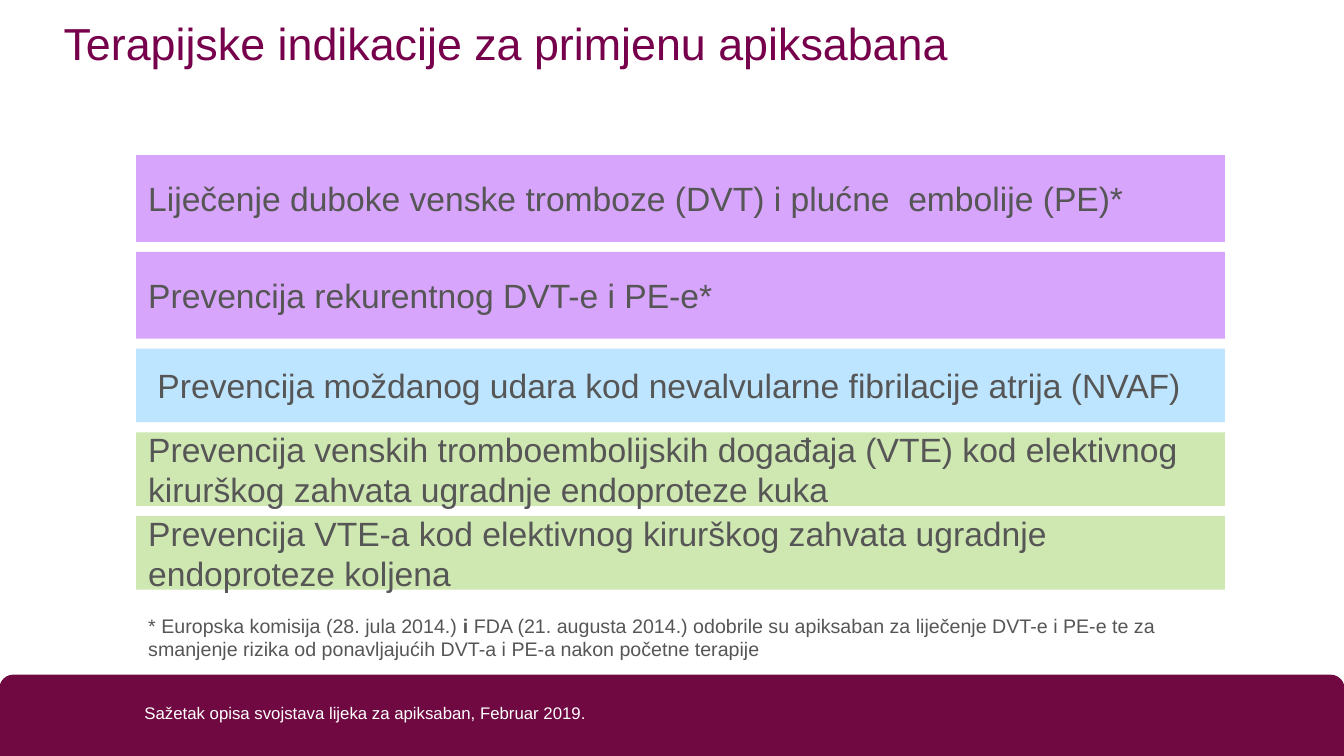
from pptx import Presentation
from pptx.dml.color import RGBColor
from pptx.enum.shapes import MSO_SHAPE
from pptx.enum.text import MSO_ANCHOR, PP_ALIGN
from pptx.util import Inches, Pt

WIDTH, HEIGHT = 13.33, 7.5
BURGUNDY = RGBColor(0x70, 0x09, 0x41)
PLUM = RGBColor(0x76, 0x00, 0x4B)
GREY = RGBColor(0x56, 0x56, 0x56)
WHITE = RGBColor(0xFF, 0xFF, 0xFF)
LILAC = RGBColor(0xD7, 0xA6, 0xFC)
SKY = RGBColor(0xBD, 0xE5, 0xFF)
LIME = RGBColor(0xCF, 0xE7, 0xB1)

BAR_GAP = 0.1
TALL, SHORT = 0.86, 0.73
INDICATIONS = [
    ("Liječenje duboke venske tromboze (DVT) i plućne  embolije (PE)*", LILAC, TALL),
    ("Prevencija rekurentnog DVT-e i PE-e*", LILAC, TALL),
    (" Prevencija moždanog udara kod nevalvularne fibrilacije atrija (NVAF)", SKY, SHORT),
    ("Prevencija venskih tromboembolijskih događaja (VTE) kod elektivnog "
     "kirurškog zahvata ugradnje endoproteze kuka", LIME, SHORT),
    ("Prevencija VTE-a kod elektivnog kirurškog zahvata ugradnje endoproteze koljena",
     LIME, SHORT),
]
FOOTNOTE = [
    ("* Europska komisija (28. jula 2014.) ", False),
    ("i", True),
    (" FDA (21. augusta 2014.) odobrile su apiksaban za liječenje DVT-e i PE-e te za "
     "smanjenje rizika od ponavljajućih DVT-a i PE-a nakon početne terapije", False),
]


def write(holder, runs, size, color, anchor=MSO_ANCHOR.TOP, inset=0.12, spacing=1.0):
    """Fill a shape with one left-aligned paragraph of (text, bold) runs."""
    frame = holder.text_frame
    layout = {"word_wrap": True, "vertical_anchor": anchor,
              "margin_left": Inches(inset), "margin_right": Inches(inset),
              "margin_top": Inches(0.06), "margin_bottom": Inches(0.06)}
    for key, value in layout.items():
        setattr(frame, key, value)
    paragraph = frame.paragraphs[0]
    paragraph.alignment = PP_ALIGN.LEFT
    paragraph.line_spacing = spacing
    for text, bold in runs:
        run = paragraph.add_run()
        run.text = text
        for key, value in {"name": "Arial", "size": Pt(size), "bold": bold}.items():
            setattr(run.font, key, value)
        run.font.color.rgb = color


def add_block(slide, kind, box, color):
    """Draw a flat filled shape in the given box."""
    block = slide.shapes.add_shape(kind, *map(Inches, box))
    block.shadow.inherit = False
    block.fill.solid()
    block.fill.fore_color.rgb = color
    block.line.fill.background()
    return block


def add_text(slide, box, runs, size, color, **options):
    """Place a wrapped text box in the given box."""
    write(slide.shapes.add_textbox(*map(Inches, box)), runs, size, color, **options)


def add_footer(slide, box):
    """Draw the rounded footer band and its source line."""
    left, top, width, height = box
    band = add_block(slide, MSO_SHAPE.ROUND_2_SAME_RECTANGLE, box, BURGUNDY)
    band.line.color.rgb = BURGUNDY
    band.line.width = Pt(1)
    source_box = (left + 0.103 * width, top - 0.14 * height, 0.49 * width, 0.81 * height)
    add_text(slide, source_box,
             [("Sažetak opisa svojstava lijeka za apiksaban, Februar 2019.", False)],
             12, WHITE, anchor=MSO_ANCHOR.BOTTOM, inset=0.06, spacing=0.9)


def add_indications(slide, box):
    """Stack the indication bars downwards from the top of the box."""
    left, top, width, _ = box
    for text, color, height in INDICATIONS:
        bar = add_block(slide, MSO_SHAPE.RECTANGLE, (left, top, width, height), color)
        write(bar, [(text, False)], 24, GREY, anchor=MSO_ANCHOR.MIDDLE)
        top += height + BAR_GAP


def main():
    """Build and save the slide."""
    deck = Presentation()
    deck.slide_width, deck.slide_height = Inches(WIDTH), Inches(HEIGHT)
    slide = deck.slides.add_slide(deck.slide_layouts[6])
    add_footer(slide, (0, 6.7, WIDTH, 0.8))
    add_text(slide, (0.51, 0.16, 12.31, 0.94),
             [("Terapijske indikacije za primjenu apiksabana", False)],
             32, PLUM, spacing=0.9)
    add_indications(slide, (1.35, 1.54, 10.8, 4.31))
    add_text(slide, (1.35, 6.03, 10.81, 0.71), FOOTNOTE, 14, GREY)
    deck.save("out.pptx")


if __name__ == "__main__":
    main()
